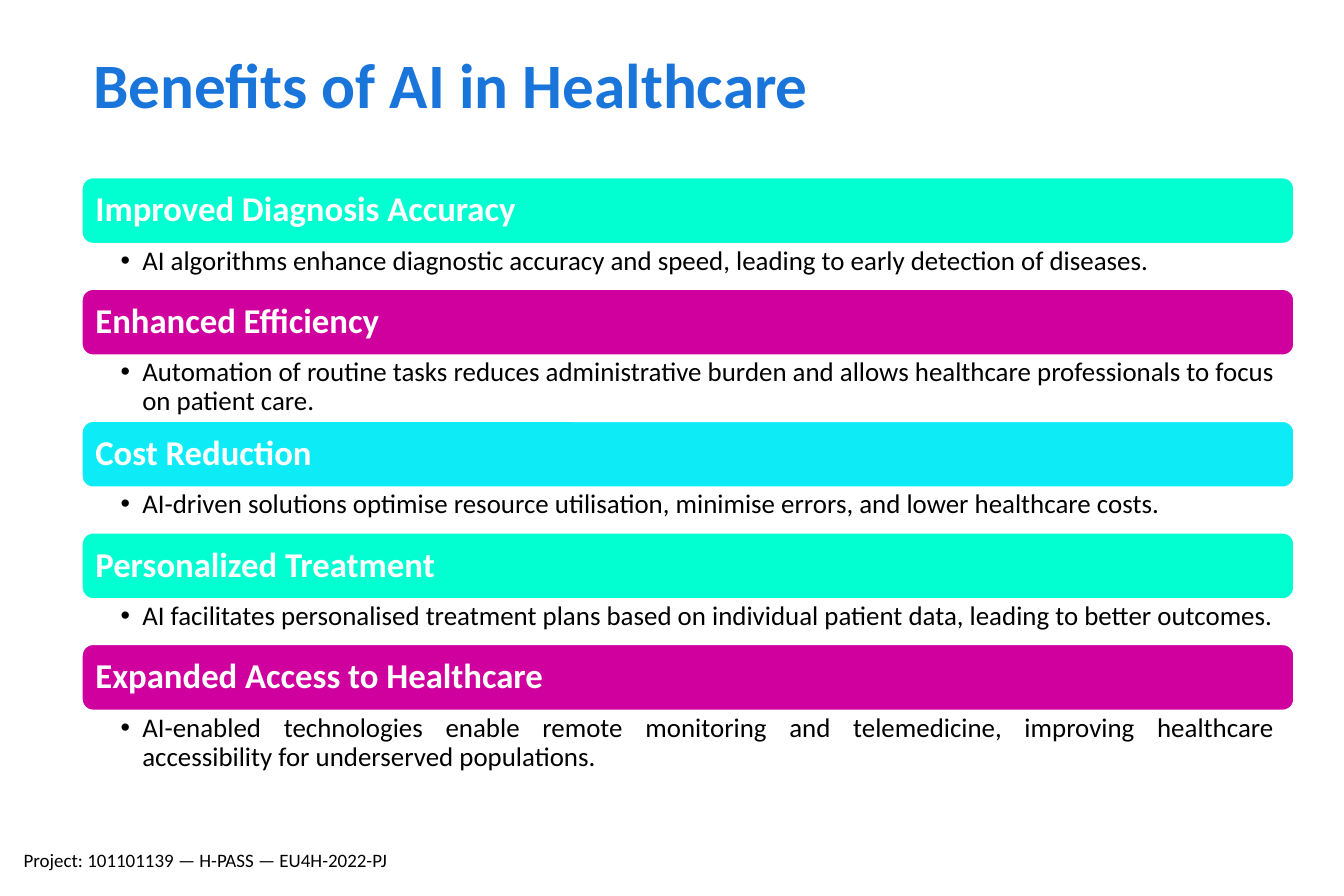
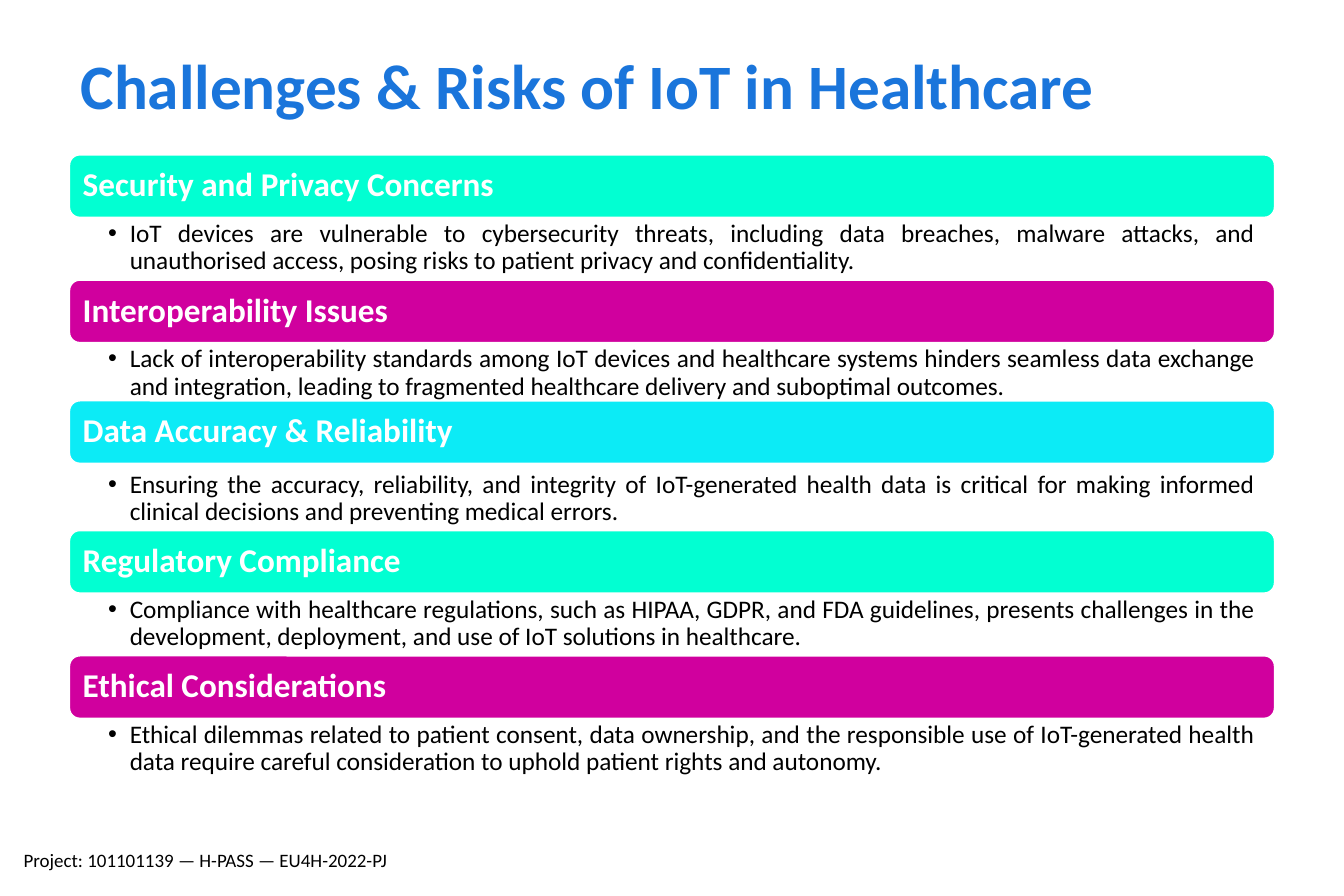
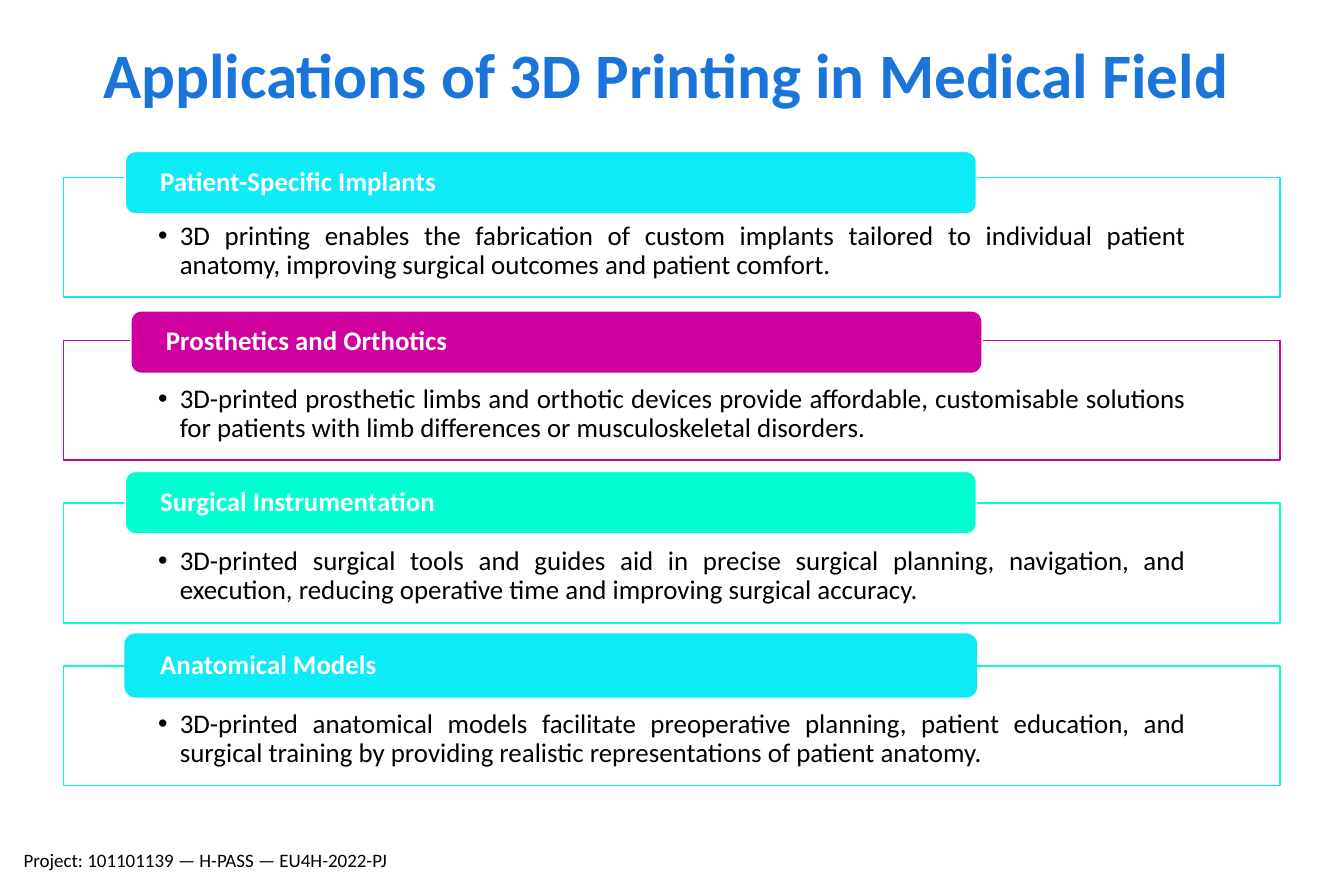
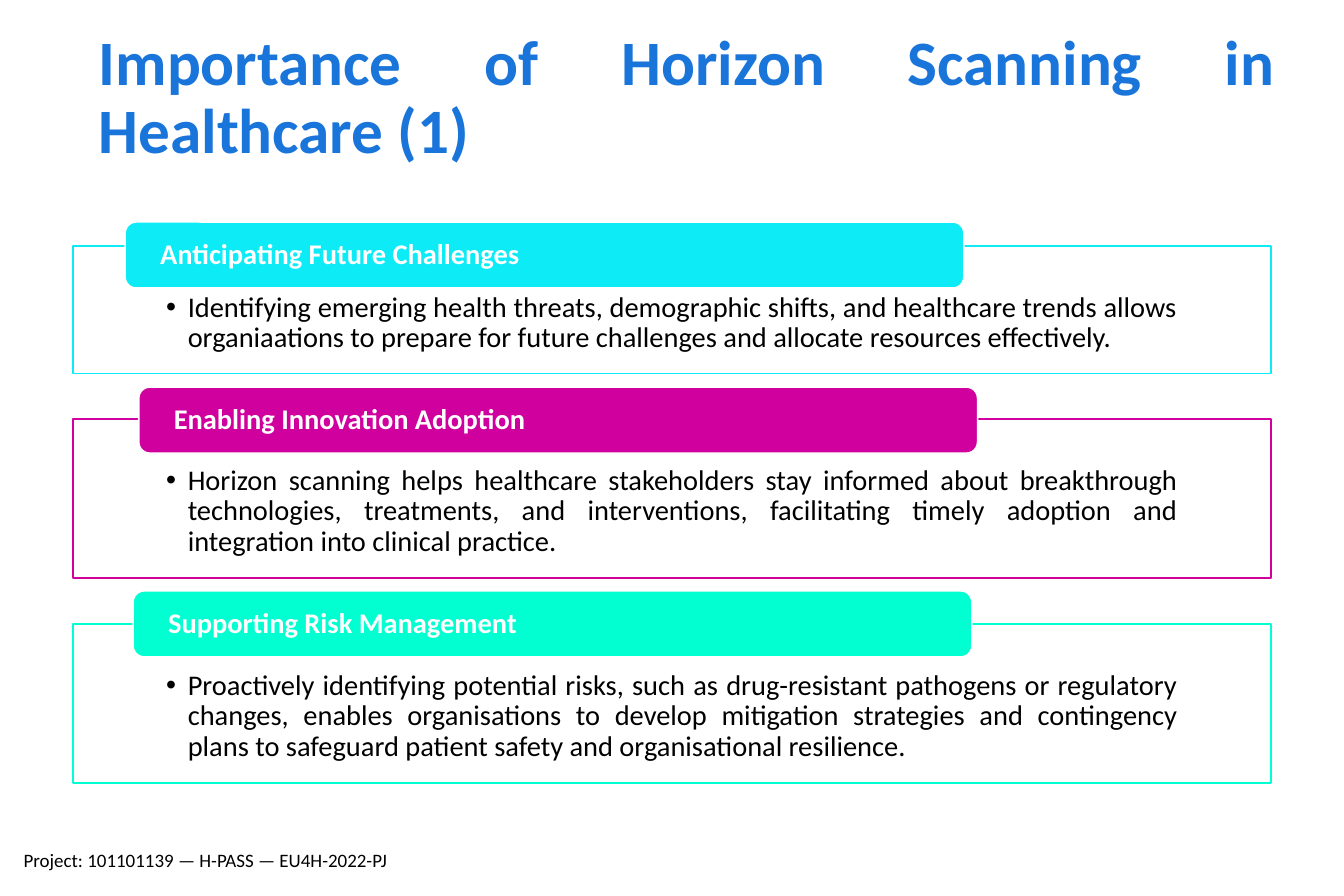
"""Builds four slides on AI, IoT, 3D printing and horizon scanning in healthcare."""
from dataclasses import dataclass

from lxml import etree
from pptx import Presentation
from pptx.dml.color import RGBColor
from pptx.enum.shapes import MSO_SHAPE
from pptx.enum.text import MSO_ANCHOR, PP_ALIGN
from pptx.oxml.ns import qn
from pptx.shapes.autoshape import Shape
from pptx.slide import Slide
from pptx.text.text import TextFrame
from pptx.util import Inches, Pt

ROUNDED = MSO_SHAPE.ROUNDED_RECTANGLE
RECTANGLE = MSO_SHAPE.RECTANGLE
TOP, MIDDLE = MSO_ANCHOR.TOP, MSO_ANCHOR.MIDDLE
LEFT, JUSTIFY = PP_ALIGN.LEFT, PP_ALIGN.JUSTIFY

FOOTER = "Project: 101101139 — H-PASS — EU4H-2022-PJ"


@dataclass(frozen=True)
class Theme:
    font: str = "Calibri"
    blue: str = "1A75DB"
    mint: str = "02FFD2"
    magenta: str = "D0009E"
    cyan: str = "0CEBF6"
    white: str = "FFFFFF"
    black: str = "000000"
    title_size: int = 40
    footer_size: int = 12
    line_width: int = 1
    line_spacing: float = 0.9
    hanging: float = 0.19


THEME = Theme()
BAND_COLORS = (THEME.mint, THEME.magenta, THEME.cyan, THEME.mint, THEME.magenta)


@dataclass(frozen=True)
class Box:
    left: float
    top: float
    width: float
    height: float


@dataclass(frozen=True)
class Topic:
    heading: str
    detail: str
    detail_height: float
    band_shift: float = 0


@dataclass(frozen=True)
class BandStyle:
    left: float
    top: float
    width: float
    height: float
    heading_size: int
    detail_size: int


@dataclass(frozen=True)
class Card:
    heading: str
    detail: str
    height: float
    tab_left: float
    tab_rise: float
    tab_color: str
    frame_color: str
    tab_line: str = THEME.white


@dataclass(frozen=True)
class CardStyle:
    left: float
    top: float
    width: float
    gap: float
    tab_width: float
    tab_height: float
    text_size: int
    insets: tuple[float, float, float, float]


def write_text(frame: TextFrame, text: str, *, size: int, color: str = THEME.black,
               bold: bool = False, align: PP_ALIGN = LEFT, anchor: MSO_ANCHOR = TOP,
               insets: tuple[float, float, float, float] = (0.1, 0.05, 0.1, 0.05),
               spacing: float = THEME.line_spacing, bullet: bool = False) -> None:
    frame.word_wrap = True
    frame.vertical_anchor = anchor
    (frame.margin_left, frame.margin_top,
     frame.margin_right, frame.margin_bottom) = map(Inches, insets)
    paragraph = frame.paragraphs[0]
    if bullet:
        properties = paragraph._p.get_or_add_pPr()
        properties.set("marL", str(Inches(THEME.hanging)))
        properties.set("indent", str(-Inches(THEME.hanging)))
        etree.SubElement(properties, qn("a:buFont"), typeface="Arial")
        etree.SubElement(properties, qn("a:buChar"), char="•")
    paragraph.alignment = align
    paragraph.line_spacing = spacing
    run = paragraph.add_run()
    run.text = text
    run.font.name = THEME.font
    run.font.size = Pt(size)
    run.font.bold = bold
    run.font.color.rgb = RGBColor.from_string(color)


def add_text(slide: Slide, box: Box) -> TextFrame:
    return slide.shapes.add_textbox(
        Inches(box.left), Inches(box.top), Inches(box.width), Inches(box.height)).text_frame


def add_panel(slide: Slide, kind: MSO_SHAPE, box: Box, line: str,
              fill: str | None = None) -> Shape:
    panel = slide.shapes.add_shape(
        kind, Inches(box.left), Inches(box.top), Inches(box.width), Inches(box.height))
    panel.shadow.inherit = False
    if fill:
        panel.fill.solid()
        panel.fill.fore_color.rgb = RGBColor.from_string(fill)
    else:
        panel.fill.background()
    panel.line.color.rgb = RGBColor.from_string(line)
    panel.line.width = Pt(THEME.line_width)
    return panel


def add_heading(slide: Slide, box: Box, text: str, *, size: int, fill: str,
                side_inset: float, line: str = THEME.white) -> None:
    band = add_panel(slide, ROUNDED, box, line, fill)
    write_text(band.text_frame, text, size=size, color=THEME.white, bold=True,
               anchor=MIDDLE, insets=(side_inset, 0, side_inset, 0))


def start_slide(deck: Presentation, title: str, title_box: Box) -> Slide:
    slide = deck.slides.add_slide(deck.slide_layouts[6])
    write_text(add_text(slide, title_box), title, size=THEME.title_size,
               color=THEME.blue, bold=True, align=JUSTIFY)
    write_text(add_text(slide, Box(0.11, 7.4, 3.63, 0.27)), FOOTER,
               size=THEME.footer_size, spacing=1.0)
    return slide


def draw_bands(slide: Slide, style: BandStyle, topics: list[Topic]) -> None:
    top = style.top
    for topic, color in zip(topics, BAND_COLORS):
        add_heading(slide, Box(style.left, top + topic.band_shift, style.width, style.height),
                    topic.heading, size=style.heading_size, fill=color, side_inset=0.09)
        top += style.height
        detail_box = Box(style.left, top, style.width, topic.detail_height)
        write_text(add_text(slide, detail_box), topic.detail, size=style.detail_size,
                   align=JUSTIFY, insets=(0.34, 0.03, 0.17, 0.03), bullet=True)
        top += topic.detail_height


def draw_cards(slide: Slide, style: CardStyle, cards: list[Card]) -> None:
    top = style.top
    for card in cards:
        frame = add_panel(slide, RECTANGLE, Box(style.left, top, style.width, card.height),
                          card.frame_color)
        write_text(frame.text_frame, card.detail, size=style.text_size, align=JUSTIFY,
                   insets=style.insets, bullet=True)
        tab_box = Box(card.tab_left, top - card.tab_rise, style.tab_width, style.tab_height)
        add_heading(slide, tab_box, card.heading, size=style.text_size,
                    fill=card.tab_color, side_inset=0.28, line=card.tab_line)
        top += card.height + style.gap


AI_BENEFITS = [
    Topic("Improved Diagnosis Accuracy",
          "AI algorithms enhance diagnostic accuracy and speed, leading to early detection "
          "of diseases.", 0.4),
    Topic("Enhanced Efficiency",
          "Automation of routine tasks reduces administrative burden and allows healthcare "
          "professionals to focus on patient care.", 0.58),
    Topic("Cost Reduction",
          "AI-driven solutions optimise resource utilisation, minimise errors, and lower "
          "healthcare costs.", 0.4),
    Topic("Personalized Treatment",
          "AI facilitates personalised treatment plans based on individual patient data, "
          "leading to better outcomes.", 0.4),
    Topic("Expanded Access to Healthcare",
          "AI-enabled technologies enable remote monitoring and telemedicine, improving "
          "healthcare accessibility for underserved populations.", 0.58),
]

IOT_RISKS = [
    Topic("Security and Privacy Concerns",
          "IoT devices are vulnerable to cybersecurity threats, including data breaches, "
          "malware attacks, and unauthorised access, posing risks to patient privacy and "
          "confidentiality.", 0.55),
    Topic("Interoperability Issues",
          "Lack of interoperability standards among IoT devices and healthcare systems "
          "hinders seamless data exchange and integration, leading to fragmented healthcare "
          "delivery and suboptimal outcomes.", 0.55),
    Topic("Data Accuracy & Reliability",
          "Ensuring the accuracy, reliability, and integrity of IoT-generated health data is "
          "critical for making informed clinical decisions and preventing medical errors.",
          0.55, band_shift=-0.04),
    Topic("Regulatory Compliance",
          "Compliance with healthcare regulations, such as HIPAA, GDPR, and FDA guidelines, "
          "presents challenges in the development, deployment, and use of IoT solutions in "
          "healthcare.", 0.55),
    Topic("Ethical Considerations",
          "Ethical dilemmas related to patient consent, data ownership, and the responsible "
          "use of IoT-generated health data require careful consideration to uphold patient "
          "rights and autonomy.", 0.55),
]

PRINTING_USES = [
    Card("Patient-Specific Implants",
         "3D printing enables the fabrication of custom implants tailored to individual "
         "patient anatomy, improving surgical outcomes and patient comfort.",
         1.05, 1.1, 0.23, THEME.cyan, THEME.cyan),
    Card("Prosthetics and Orthotics",
         "3D-printed prosthetic limbs and orthotic devices provide affordable, customisable "
         "solutions for patients with limb differences or musculoskeletal disorders.",
         1.05, 1.15, 0.26, THEME.magenta, THEME.magenta),
    Card("Surgical Instrumentation",
         "3D-printed surgical tools and guides aid in precise surgical planning, navigation, "
         "and execution, reducing operative time and improving surgical accuracy.",
         1.05, 1.1, 0.28, THEME.mint, THEME.mint),
    Card("Anatomical Models",
         "3D-printed anatomical models facilitate preoperative planning, patient education, "
         "and surgical training by providing realistic representations of patient anatomy.",
         1.05, 1.1, 0.28, THEME.cyan, THEME.mint, tab_line=THEME.cyan),
]

SCANNING_REASONS = [
    Card("Anticipating Future Challenges",
         "Identifying emerging health threats, demographic shifts, and healthcare trends "
         "allows organiaations to prepare for future challenges and allocate resources "
         "effectively.", 1.12, 1.1, 0.21, THEME.cyan, THEME.cyan),
    Card("Enabling Innovation Adoption",
         "Horizon scanning helps healthcare stakeholders stay informed about breakthrough "
         "technologies, treatments, and interventions, facilitating timely adoption and "
         "integration into clinical practice.",
         1.4, 1.22, 0.28, THEME.magenta, THEME.magenta),
    Card("Supporting Risk Management",
         "Proactively identifying potential risks, such as drug-resistant pathogens or "
         "regulatory changes, enables organisations to develop mitigation strategies and "
         "contingency plans to safeguard patient safety and organisational resilience.",
         1.4, 1.17, 0.29, THEME.mint, THEME.mint),
]


def main() -> None:
    deck = Presentation()
    deck.slide_width, deck.slide_height = Inches(11.81), Inches(7.87)

    benefits = start_slide(deck, "Benefits of AI in Healthcare", Box(0.72, 0.42, 6.68, 0.79))
    draw_bands(benefits, BandStyle(0.72, 1.56, 10.65, 0.58, 22, 17), AI_BENEFITS)

    risks = start_slide(deck, "Challenges & Risks of IoT in Healthcare",
                        Box(0.61, 0.43, 9.85, 0.76))
    draw_bands(risks, BandStyle(0.61, 1.36, 10.59, 0.55, 21, 16), IOT_RISKS)

    printing = start_slide(deck, "Applications of 3D Printing in Medical Field",
                           Box(0.81, 0.34, 10.44, 0.92))
    draw_cards(printing, CardStyle(0.56, 1.56, 10.69, 0.38, 7.48, 0.55, 17,
                                   (0.83, 0.39, 0.83, 0.13)), PRINTING_USES)

    scanning = start_slide(deck, "Importance of Horizon Scanning in Healthcare (1)",
                           Box(0.77, 0.22, 10.53, 1.39))
    draw_cards(scanning, CardStyle(0.64, 2.16, 10.53, 0.4, 7.37, 0.58, 18,
                                   (0.82, 0.41, 0.82, 0.14)), SCANNING_REASONS)

    deck.save("out.pptx")


if __name__ == "__main__":
    main()
